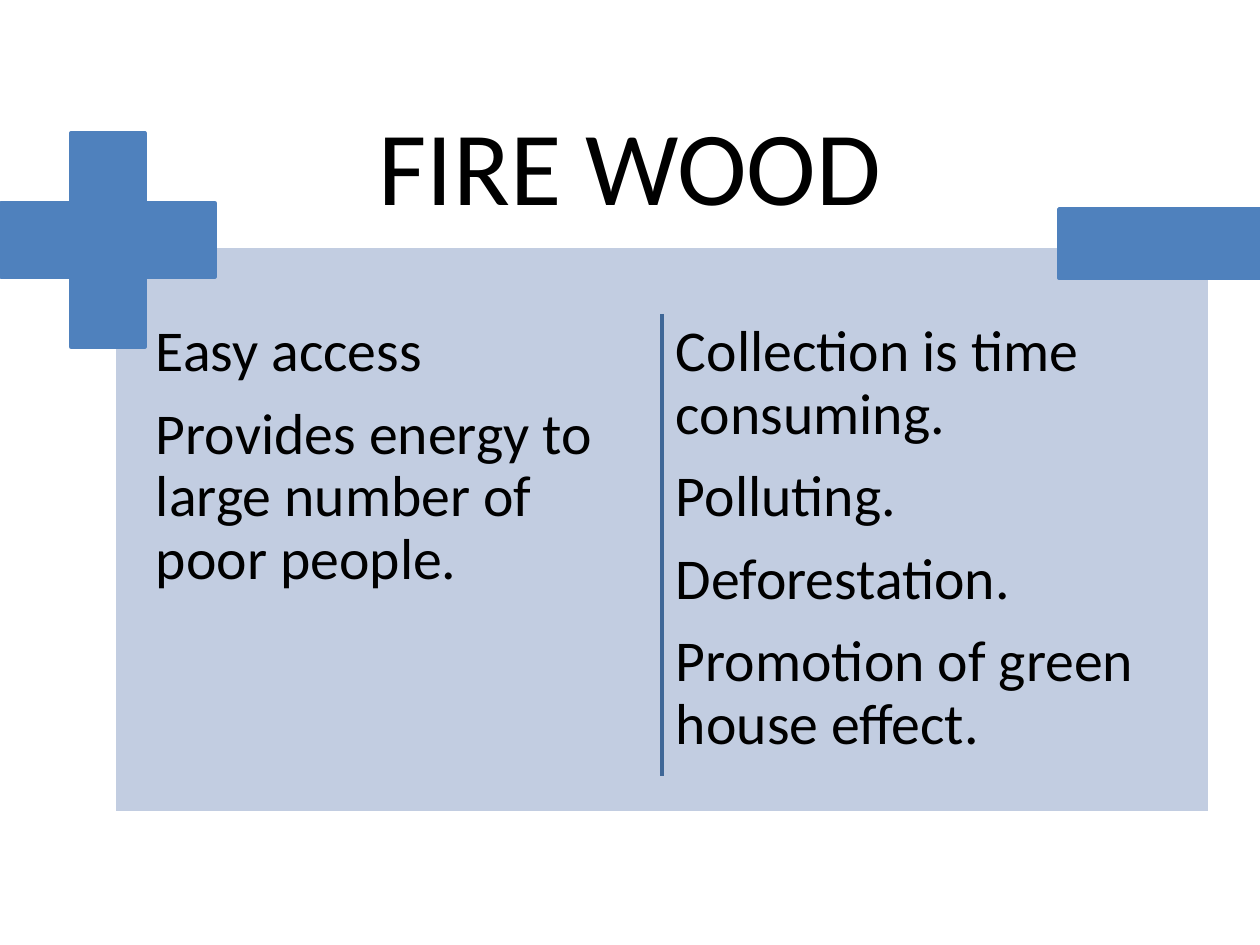
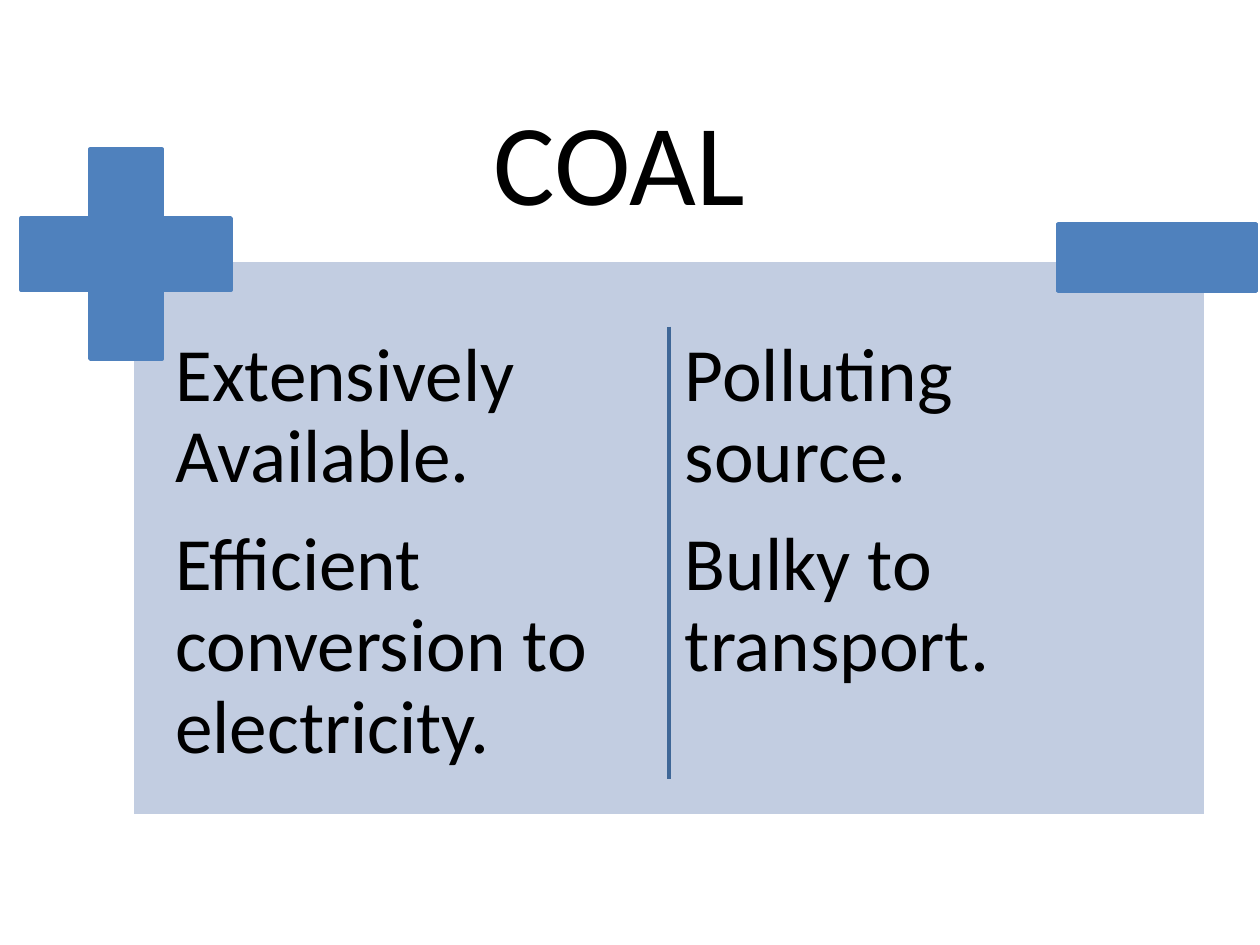
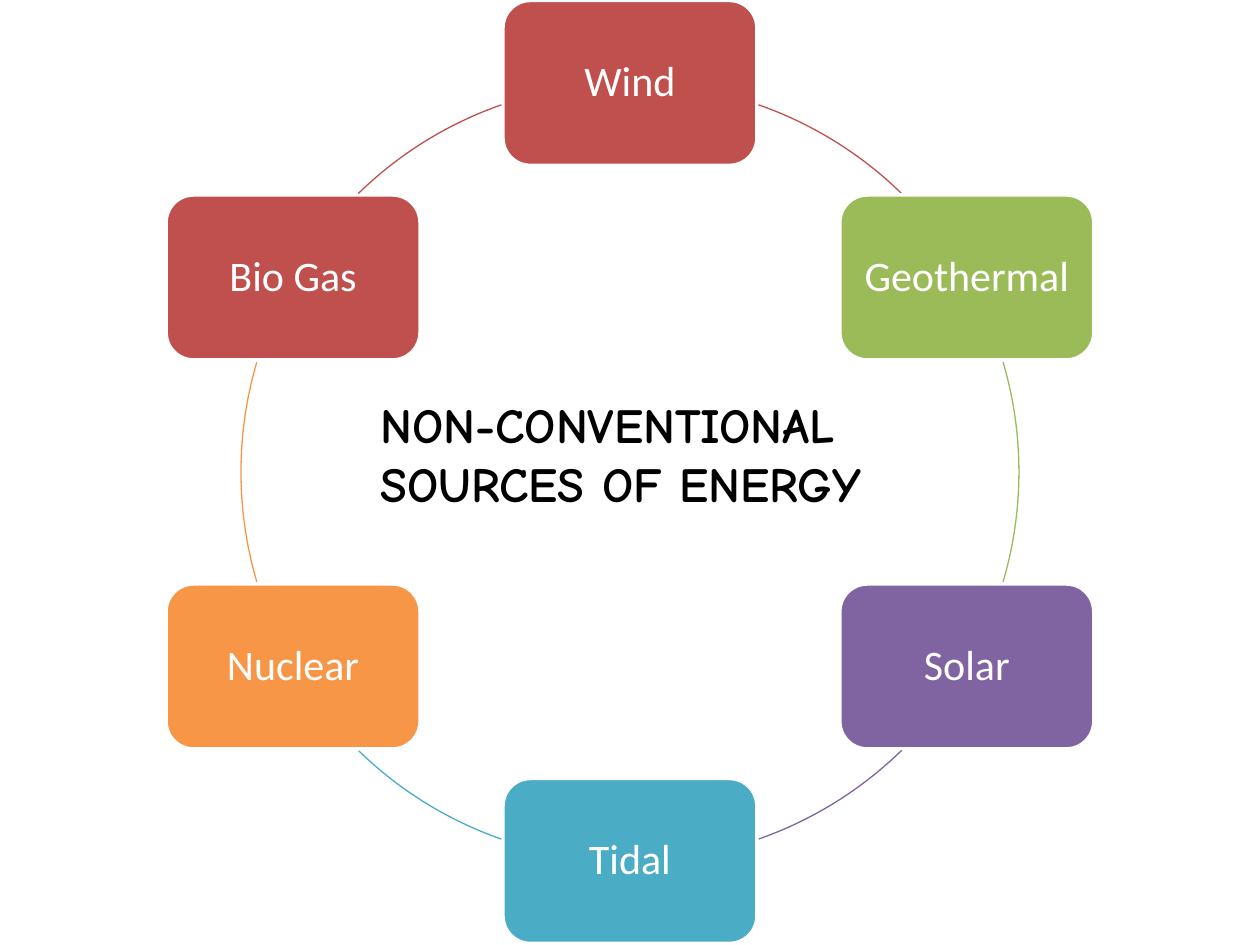
from math import cos, radians, sin

from lxml.etree import SubElement
from pptx import Presentation
from pptx.dml.color import RGBColor
from pptx.enum.shapes import MSO_CONNECTOR as Connector, MSO_SHAPE as Shape
from pptx.enum.text import MSO_ANCHOR as Anchor, PP_ALIGN as Align
from pptx.oxml.ns import qn
from pptx.util import Pt

PX_PER_INCH = 126
EMU_PER_PX = 914400 / PX_PER_INCH

BLACK = RGBColor(0x00, 0x00, 0x00)
WHITE = RGBColor(0xFF, 0xFF, 0xFF)
PANEL = RGBColor(0xC2, 0xCD, 0xE1)
BLUE = RGBColor(0x4F, 0x81, 0xBD)
DIVIDER = RGBColor(0x3F, 0x67, 0x97)
RED = RGBColor(0xC0, 0x50, 0x4D)
GREEN = RGBColor(0x9B, 0xBB, 0x59)
PURPLE = RGBColor(0x80, 0x64, 0xA2)
TEAL = RGBColor(0x4B, 0xAC, 0xC6)
ORANGE = RGBColor(0xF7, 0x96, 0x46)

BODY_FONT = "Calibri"
HEADING_FONT = "Comic Neue"
LINE_SPACING = 0.9
SPACE_AFTER = 0.35

SOURCES = [
    ("Wind", RED),
    ("Geothermal", GREEN),
    ("Solar", PURPLE),
    ("Tidal", TEAL),
    ("Nuclear", ORANGE),
    ("Bio Gas", RED),
]
ARC_SPANS = [(289.3, 314.3), (343.6, 16.4), (45.7, 70.7),
             (109.3, 134.3), (163.6, 196.4), (225.7, 250.7)]


def emu(*lengths):
    return [round(length * EMU_PER_PX) for length in lengths]


class Deck:
    def __init__(self):
        self.deck = Presentation()
        self.deck.slide_width, self.deck.slide_height = emu(1260, 945)
        self.page = None

    def add_page(self):
        self.page = self.deck.slides.add_slide(self.deck.slide_layouts[6])

    def shape(self, kind, area, fill, line, width=2):
        shape = self.page.shapes.add_shape(kind, *emu(*area))
        shape.shadow.inherit = False
        if fill is None:
            shape.fill.background()
        else:
            shape.fill.solid()
            shape.fill.fore_color.rgb = fill
        shape.line.color.rgb = line
        shape.line.width = Pt(width)
        return shape

    def fill_text(self, frame, lines, size, color=BLACK, font=BODY_FONT,
                  align=Align.LEFT, bold=False, body=False):
        frame.word_wrap = True
        for index, line in enumerate(lines):
            para = frame.add_paragraph() if index else frame.paragraphs[0]
            para.text = line
            para.alignment = align
            para.font.name = font
            para.font.size = Pt(size)
            para.font.bold = bold
            para.font.color.rgb = color
            if body:
                para.line_spacing = LINE_SPACING
                para.space_after = Pt(size * SPACE_AFTER)

    def inset(self, frame, length):
        margin, = emu(length)
        frame.margin_left = frame.margin_right = margin
        frame.margin_top = frame.margin_bottom = margin

    def text(self, area, lines, size, inset=None, **style):
        frame = self.page.shapes.add_textbox(*emu(*area)).text_frame
        if inset is not None:
            self.inset(frame, inset)
        self.fill_text(frame, lines, size, **style)

    def line(self, start, end, color, width=2):
        line = self.page.shapes.add_connector(Connector.STRAIGHT, *emu(*start, *end))
        line.line.color.rgb = color
        line.line.width = Pt(width)
        SubElement(line._element.spPr, qn("a:effectLst"))

    def arc(self, center, radius, span, color):
        x, y = center
        area = (x - radius, y - radius, 2 * radius, 2 * radius)
        arc = self.shape(Shape.ARC, area, None, color, 0.75)
        for index, degrees in enumerate(span):
            arc.adjustments[index] = degrees * 0.6

    def node(self, center, size, label, color):
        x, y = center
        width, height = size
        area = (x - width / 2, y - height / 2, width, height)
        frame = self.shape(Shape.ROUNDED_RECTANGLE, area, color, WHITE).text_frame
        frame.vertical_anchor = Anchor.MIDDLE
        self.inset(frame, 10)
        self.fill_text(frame, [label], 24, WHITE, align=Align.CENTER, body=True)

    def pros_and_cons(self, title, title_area, title_size, origin, scale,
                      pros, cons, size, inset):
        left, top = origin

        def place(x, y, width, height):
            return (left + x * scale, top + y * scale, width * scale, height * scale)

        self.add_page()
        self.shape(Shape.RECTANGLE, place(0, 0, 1096, 567), PANEL, WHITE)
        for x, lines in ((33, pros), (553, cons)):
            self.text(place(x, 67, 509, 485), lines, size, inset, body=True)
        plus = self.shape(Shape.CROSS, place(-113, -113, 214, 214), BLUE, BLUE)
        plus.adjustments[0] = 0.328
        self.shape(Shape.RECTANGLE, place(945, -37, 202, 69), BLUE, BLUE)
        divider = left + 548 * scale
        self.line((divider, top + 68 * scale), (divider, top + 530 * scale), DIVIDER)
        self.text(title_area, [title], title_size, align=Align.CENTER)

    def source_cycle(self, heading, sources):
        center_x, center_y, radius = 630, 472, 389
        self.add_page()
        for index, (label, color) in enumerate(sources):
            angle = radians(index * 360 / len(sources) - 90)
            center = (center_x + radius * cos(angle), center_y + radius * sin(angle))
            self.node(center, (254, 165), label, color)
            self.arc((center_x, center_y), radius, ARC_SPANS[index], color)
        self.text((368, 388, 588, 190), [heading], 28, font=HEADING_FONT, bold=True)


def main():
    deck = Deck()
    deck.pros_and_cons(
        "FIRE WOOD", (168, 94, 924, 140), 60, (114, 246), 1,
        ["Easy access", "Provides energy to large number of poor people."],
        ["Collection is time consuming.", "Polluting.", "Deforestation.",
         "Promotion of green house effect."], 33, 9)
    deck.pros_and_cons(
        "COAL", (168, 84, 903, 152), 66, (132, 260), 0.98,
        ["Extensively Available.", "Efficient conversion to electricity."],
        ["Polluting source.", "Bulky to transport."], 43, 11)
    deck.source_cycle("NON-CONVENTIONAL SOURCES OF ENERGY", SOURCES)
    deck.deck.save("out.pptx")


if __name__ == "__main__":
    main()
